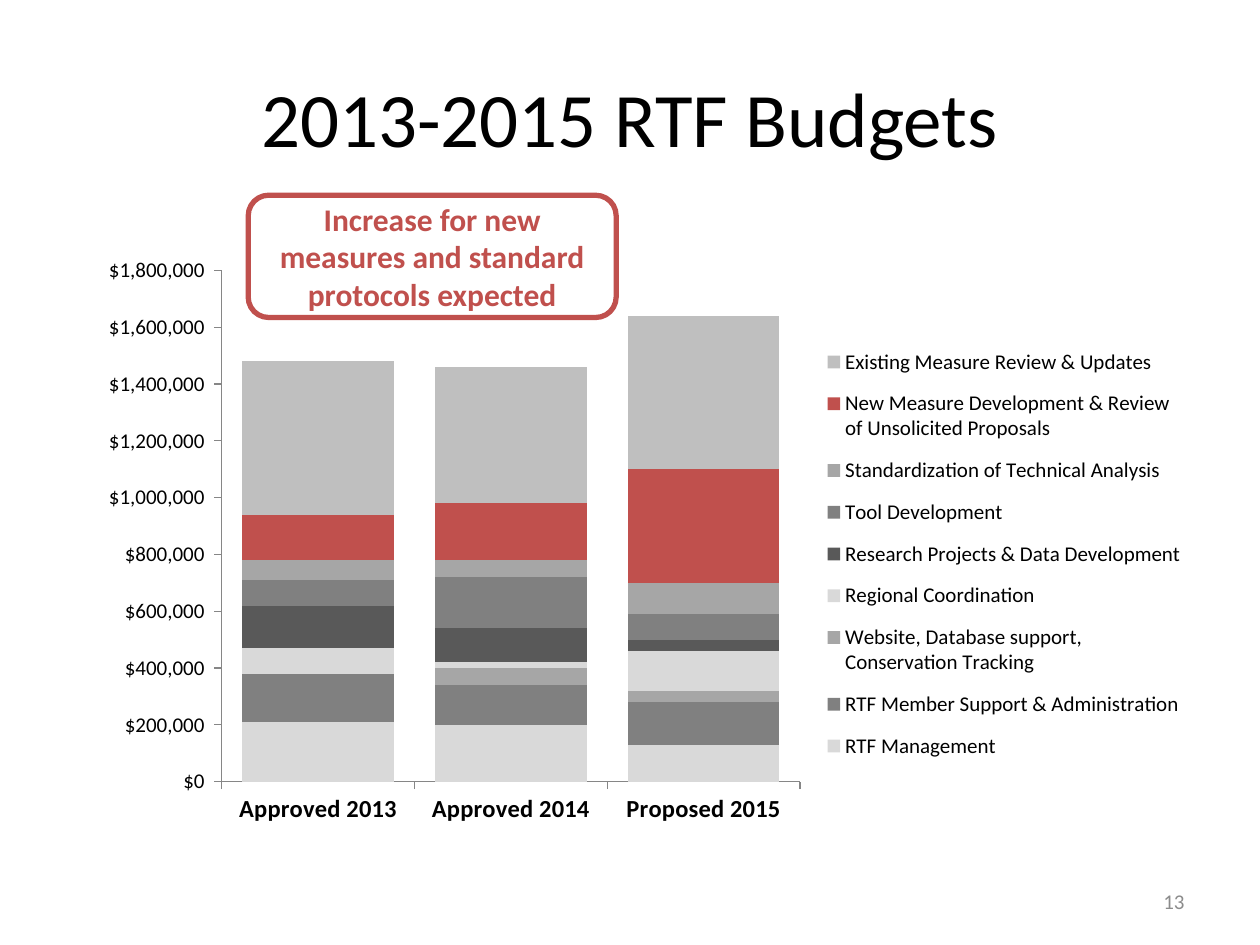
from lxml import etree
from pptx import Presentation
from pptx.chart.data import CategoryChartData
from pptx.dml.color import RGBColor
from pptx.enum.chart import XL_CHART_TYPE as ChartType, XL_LEGEND_POSITION as LegendPosition
from pptx.enum.chart import XL_TICK_MARK as TickMark
from pptx.enum.shapes import MSO_SHAPE as Preset
from pptx.enum.text import MSO_ANCHOR as Anchor, PP_ALIGN as Align
from pptx.oxml.ns import qn
from pptx.util import Inches, Pt

FONT = "Calibri"
BLACK, RED, AXIS_GRAY = "000000", "C0504D", "868686"
DOLLARS = '"$"#,##0_);\\("$"#,##0\\)'
YEARS = ["Approved 2013", "Approved 2014", "Proposed 2015"]
BUDGETS = [
    ("RTF Management", (210000, 200000, 130000), "D9D9D9"),
    ("RTF Member Support & Administration", (170000, 140000, 150000), "808080"),
    ("Website, Database support, Conservation Tracking", (0, 60000, 40000), "A6A6A6"),
    ("Regional Coordination", (90000, 20000, 140000), "D9D9D9"),
    ("Research Projects & Data Development", (150000, 120000, 40000), "595959"),
    ("Tool Development", (90000, 180000, 90000), "808080"),
    ("Standardization of Technical Analysis", (70000, 60000, 110000), "A6A6A6"),
    ("New Measure Development & Review of Unsolicited Proposals",
     (160000, 200000, 400000), RED),
    ("Existing Measure Review & Updates", (540000, 480000, 540000), "BFBFBF"),
]


def rgb(color):
    return RGBColor.from_string(color)


def inches(box):
    return [Inches(length) for length in box]


def style_font(font, size, color=BLACK, bold=False):
    font.name, font.size, font.bold = FONT, Pt(size), bold
    font.color.rgb = rgb(color)


def write_text(shape, text, size, color, align, bold=False):
    frame = shape.text_frame
    frame.word_wrap = True
    frame.vertical_anchor = Anchor.MIDDLE
    paragraph = frame.paragraphs[0]
    paragraph.alignment = align
    run = paragraph.add_run()
    run.text = text
    style_font(run.font, size, color, bold)


def add_label(slide, box, text, size, color, align):
    write_text(slide.shapes.add_textbox(*inches(box)), text, size, color, align)


def set_layout(parent, after, fractions, inner=False):
    for old in parent.findall(qn("c:layout")):
        parent.remove(old)
    layout = etree.Element(qn("c:layout"))
    manual = etree.SubElement(layout, qn("c:manualLayout"))
    settings = [("layoutTarget", "inner")] if inner else []
    settings += [("xMode", "edge"), ("yMode", "edge")]
    settings += zip("xywh", fractions)
    for tag, value in settings:
        etree.SubElement(manual, qn(f"c:{tag}")).set("val", str(value))
    if after is None:
        parent.insert(0, layout)
    else:
        after.addnext(layout)


def style_axis(axis, size, bold=False):
    axis.has_major_gridlines = False
    axis.minor_tick_mark = TickMark.NONE
    axis.major_tick_mark = TickMark.OUTSIDE
    axis.format.line.color.rgb = rgb(AXIS_GRAY)
    axis.format.line.width = Pt(0.75)
    style_font(axis.tick_labels.font, size, BLACK, bold)


def add_budget_chart(slide, box):
    data = CategoryChartData(number_format=DOLLARS)
    data.categories = YEARS
    for name, amounts, _ in BUDGETS:
        data.add_series(name, amounts)
    chart = slide.shapes.add_chart(ChartType.COLUMN_STACKED, *inches(box), data).chart
    chart.has_title = False
    style_font(chart.font, 10)

    plot = chart.plots[0]
    plot.gap_width, plot.overlap = 27, 100
    plot.vary_by_categories = False
    for series, (_, _, color) in zip(plot.series, BUDGETS):
        series.format.fill.solid()
        series.format.fill.fore_color.rgb = rgb(color)

    style_axis(chart.category_axis, 14, bold=True)
    amount_axis = chart.value_axis
    style_axis(amount_axis, 12)
    amount_axis.minimum_scale, amount_axis.maximum_scale = 0, 1800000
    amount_axis.major_unit = 200000
    amount_axis.tick_labels.number_format = DOLLARS
    amount_axis.tick_labels.number_format_is_linked = False

    chart.has_legend = True
    legend = chart.legend
    legend.position = LegendPosition.RIGHT
    legend.include_in_layout = False
    style_font(legend.font, 12)

    plot_area = chart.element.find(f".//{qn('c:plotArea')}")
    set_layout(plot_area, None, (0.14, 0.08, 0.51, 0.82), inner=True)
    legend_part = chart.element.find(f".//{qn('c:legend')}")
    set_layout(legend_part, legend_part.find(qn("c:legendPos")), (0.67, 0.18, 0.32, 0.71))


def add_callout(slide, box, text):
    callout = slide.shapes.add_shape(Preset.ROUNDED_RECTANGLE, *inches(box))
    callout.shadow.inherit = False
    callout.fill.background()
    callout.line.color.rgb = rgb(RED)
    callout.line.width = Pt(3)
    write_text(callout, text, 18, RED, Align.CENTER, bold=True)


def build_budget_slide(deck):
    slide = deck.slides.add_slide(deck.slide_layouts[6])
    add_budget_chart(slide, (0.5, 1.75, 9, 4.95))
    add_label(slide, (0.5, 0.3, 9, 1.25), "2013-2015 RTF Budgets", 44, BLACK, Align.CENTER)
    add_label(slide, (7.17, 6.95, 2.33, 0.4), "13", 12, "8C8C8C", Align.RIGHT)
    add_callout(slide, (1.97, 1.55, 2.92, 0.97),
                "Increase for new measures and standard protocols expected")


def main():
    deck = Presentation()
    deck.slide_width, deck.slide_height = Inches(10), Inches(7.5)
    build_budget_slide(deck)
    deck.save("out.pptx")


if __name__ == "__main__":
    main()
